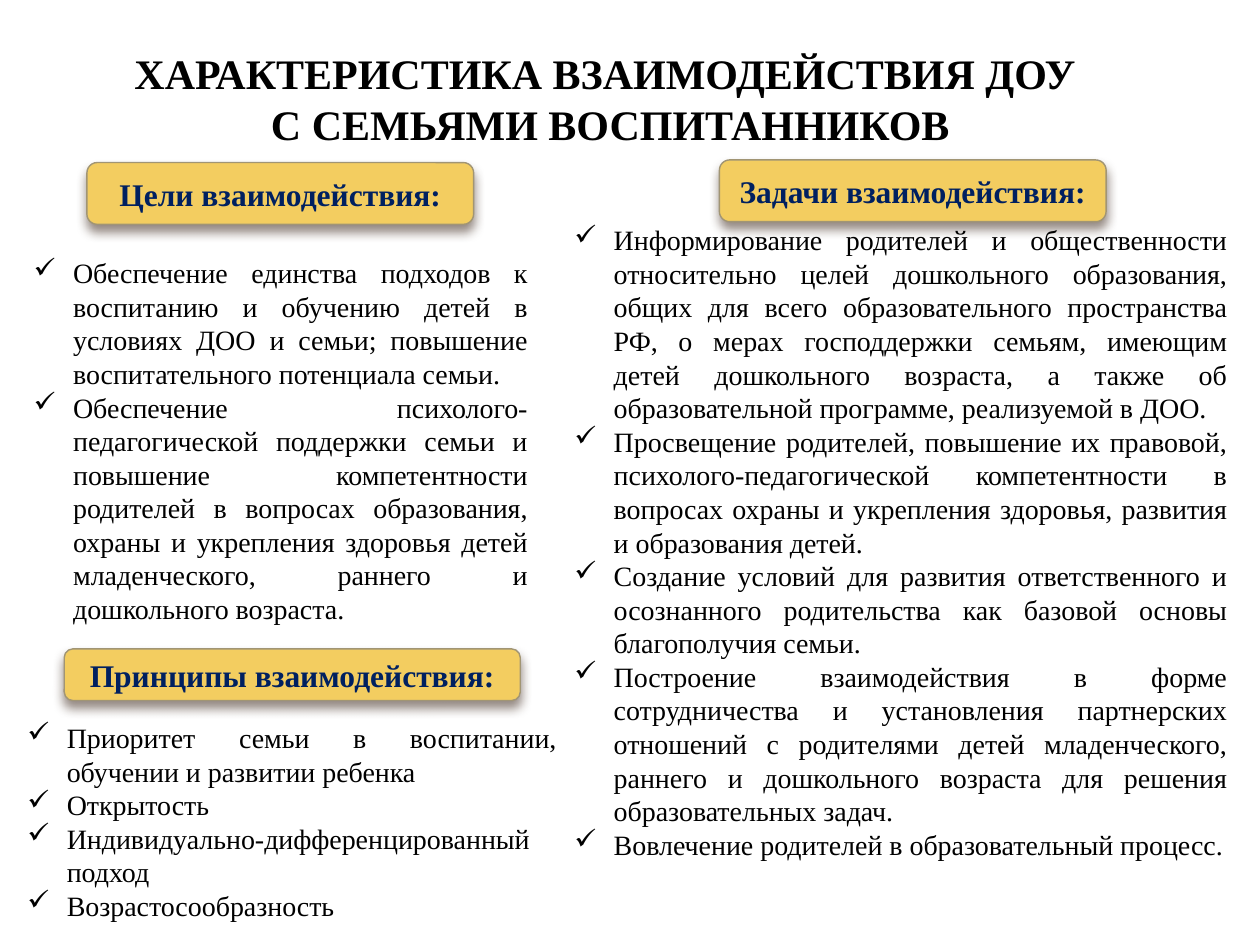
from dataclasses import dataclass

from lxml import etree
from pptx import Presentation
from pptx.dml.color import RGBColor
from pptx.enum.shapes import MSO_SHAPE
from pptx.enum.text import MSO_ANCHOR, PP_ALIGN
from pptx.oxml.ns import qn
from pptx.shapes.autoshape import Shape
from pptx.slide import Slide
from pptx.text.text import TextFrame
from pptx.util import Pt

ROUNDED = MSO_SHAPE.ROUNDED_RECTANGLE
CENTER, JUSTIFY = PP_ALIGN.CENTER, PP_ALIGN.JUSTIFY
TOP, MIDDLE = MSO_ANCHOR.TOP, MSO_ANCHOR.MIDDLE

FONT = "Times New Roman"
BLACK, NAVY = "000000", "002060"
GOLD, GOLD_EDGE, SHADOW = "F3CD60", "A19574", "4E3B30"
BULLET_INDENT = 22.5


@dataclass(frozen=True)
class Box:
    """Position and size in points."""

    left: float
    top: float
    width: float
    height: float

    def lengths(self) -> tuple[Pt, Pt, Pt, Pt]:
        """Return the four values as lengths."""
        return Pt(self.left), Pt(self.top), Pt(self.width), Pt(self.height)


@dataclass(frozen=True)
class Section:
    """A heading plate with its checklist."""

    heading: str
    heading_box: Box
    items: tuple[str, ...]
    items_box: Box


TITLE = ("ХАРАКТЕРИСТИКА ВЗАИМОДЕЙСТВИЯ ДОУ ", "С СЕМЬЯМИ ВОСПИТАННИКОВ")
TITLE_BOX = Box(65.5, 23.8, 566.6, 65.5)

GOALS = Section(
    "Цели взаимодействия:",
    Box(49.7, 92.9, 221, 35.3),
    (
        "Обеспечение единства подходов к воспитанию и обучению детей в условиях ДОО и семьи; "
        "повышение воспитательного потенциала семьи.",
        "Обеспечение психолого-педагогической поддержки семьи и повышение компетентности "
        "родителей в вопросах образования, охраны и укрепления здоровья детей младенческого, "
        "раннего и дошкольного возраста.",
    ),
    Box(12.2, 142.6, 296.6, 220.3),
)
TASKS = Section(
    "Задачи взаимодействия:",
    Box(411.1, 91.4, 221, 35.3),
    (
        "Информирование родителей и общественности относительно целей дошкольного образования, "
        "общих для всего образовательного пространства РФ, о мерах господдержки семьям, имеющим "
        "детей дошкольного возраста, а также об образовательной программе, реализуемой в ДОО.",
        "Просвещение родителей, повышение их правовой, психолого-педагогической компетентности "
        "в вопросах охраны и укрепления здоровья, развития и образования детей.",
        "Создание условий для развития ответственного и осознанного родительства как базовой "
        "основы благополучия семьи.",
        "Построение взаимодействия в форме сотрудничества и установления партнерских отношений "
        "с родителями детей младенческого, раннего и дошкольного возраста для решения "
        "образовательных задач.",
        "Вовлечение родителей в образовательный процесс.",
    ),
    Box(321.1, 123.8, 387.4, 380.2),
)
PRINCIPLES = Section(
    "Принципы взаимодействия:",
    Box(36.7, 370.8, 260.6, 29.5),
    (
        "Приоритет семьи в воспитании, обучении и развитии ребенка",
        "Открытость",
        "Индивидуально-дифференцированный подход",
        "Возрастосообразность",
    ),
    Box(8.6, 408.2, 316.8, 123.8),
)


def color(code: str) -> RGBColor:
    """Turn a hex string into a colour."""
    return RGBColor.from_string(code)


def write(frame: TextFrame, lines: tuple[str, ...], *, size: float, ink: str = BLACK,
          bold: bool = False, align: PP_ALIGN = CENTER, anchor: MSO_ANCHOR = TOP,
          bullet: str = "") -> None:
    """Fill a text frame with one paragraph per line."""
    frame.word_wrap = True
    frame.vertical_anchor = anchor
    for index, line in enumerate(lines):
        paragraph = frame.paragraphs[0] if index == 0 else frame.add_paragraph()
        paragraph.alignment = align
        run = paragraph.add_run()
        run.text = line
        run.font.name, run.font.size, run.font.bold = FONT, Pt(size), bold
        run.font.color.rgb = color(ink)
        if bullet:
            properties = paragraph._p.get_or_add_pPr()
            properties.set("marL", str(Pt(BULLET_INDENT)))
            properties.set("indent", str(-Pt(BULLET_INDENT)))
            etree.SubElement(properties, qn("a:buChar"), char=bullet)


def drop_shadow(plate: Shape) -> None:
    """Give a plate a soft shadow straight below it."""
    plate.shadow.inherit = False
    effects = plate._element.spPr.find(qn("a:effectLst"))
    outer = etree.SubElement(effects, qn("a:outerShdw"), blurRad=str(Pt(6)), dist=str(Pt(4)),
                             dir="5400000", rotWithShape="0")
    tint = etree.SubElement(outer, qn("a:srgbClr"), val=SHADOW)
    etree.SubElement(tint, qn("a:alpha"), val="60000")


def draw_heading(slide: Slide, section: Section) -> None:
    """Draw the gold plate that names a section."""
    plate = slide.shapes.add_shape(ROUNDED, *section.heading_box.lengths())
    plate.fill.solid()
    plate.fill.fore_color.rgb = color(GOLD)
    plate.line.color.rgb = color(GOLD_EDGE)
    plate.line.width = Pt(0.79)
    drop_shadow(plate)
    write(plate.text_frame, (section.heading,), size=18, ink=NAVY, bold=True, anchor=MIDDLE)


def draw_items(slide: Slide, section: Section) -> None:
    """Draw the checklist of a section."""
    checklist = slide.shapes.add_textbox(*section.items_box.lengths())
    write(checklist.text_frame, section.items, size=16, align=JUSTIFY, bullet="✓")


def main() -> None:
    """Build and save the slide."""
    deck = Presentation()
    deck.slide_width, deck.slide_height = Pt(720), Pt(540)
    slide = deck.slides.add_slide(deck.slide_layouts[6])
    title = slide.shapes.add_textbox(*TITLE_BOX.lengths())
    write(title.text_frame, TITLE, size=24, bold=True)
    for section in (GOALS, TASKS, PRINCIPLES):
        draw_heading(slide, section)
    for section in (PRINCIPLES, GOALS, TASKS):
        draw_items(slide, section)
    deck.save("out.pptx")


if __name__ == "__main__":
    main()
